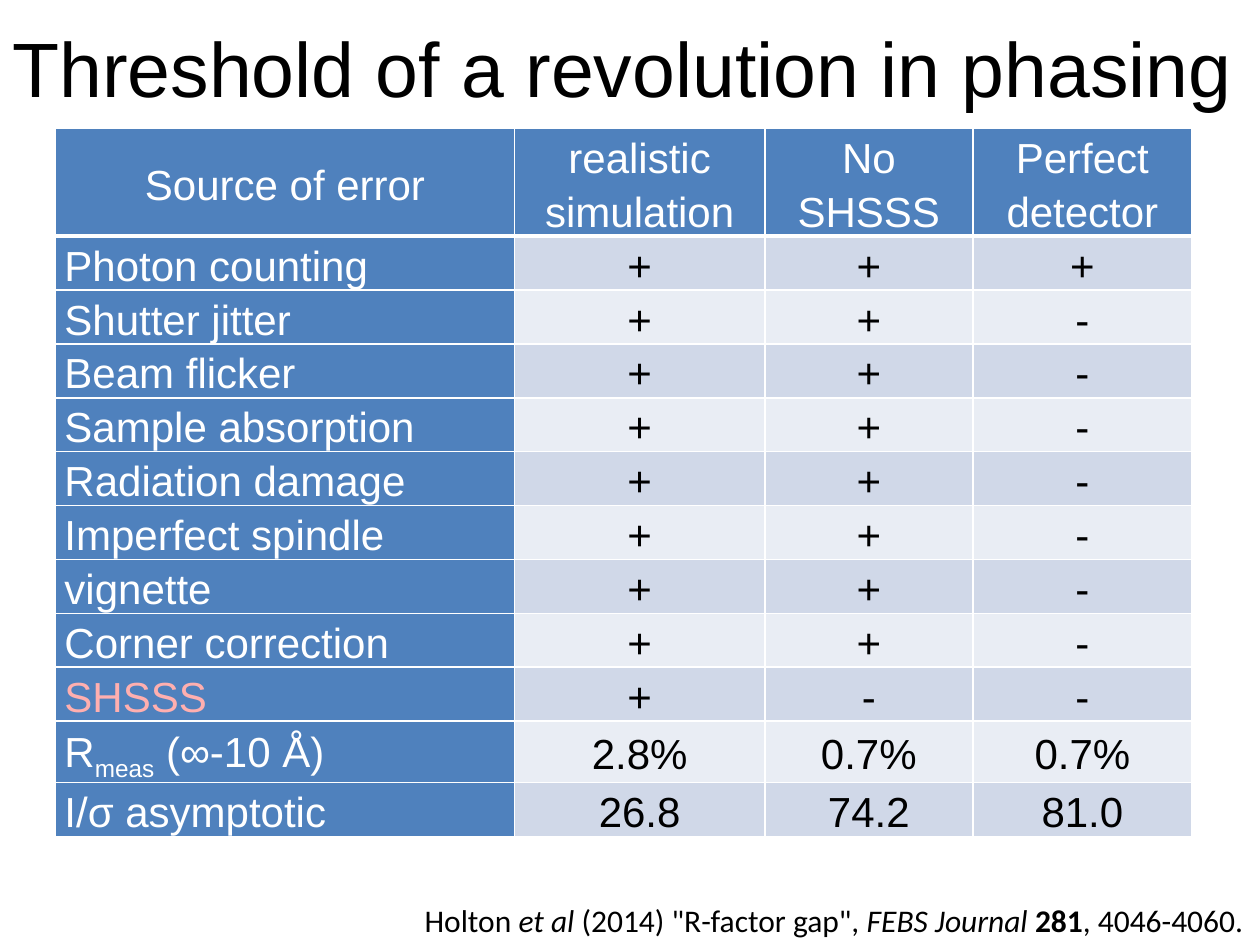
import dataclasses
import typing

import lxml.etree
import pptx
import pptx.dml.color
import pptx.enum.text
import pptx.oxml.ns
import pptx.util

Cm = pptx.util.Cm
Pt = pptx.util.Pt
Align = pptx.enum.text.PP_ALIGN
Anchor = pptx.enum.text.MSO_ANCHOR


@dataclasses.dataclass(frozen=True)
class Theme:
    sans: str = "Arial"
    citation_font: str = "Calibri"
    black: str = "000000"
    white: str = "FFFFFF"
    heading_fill: str = "4F81BD"
    bands: tuple[str, str] = ("D0D8E8", "E9EDF4")
    highlight: str = "FFAFAF"
    title_size: float = 44
    table_size: float = 24
    citation_size: float = 18
    rule: float = 1
    header_rule: float = 3


THEME = Theme()


@dataclasses.dataclass(frozen=True)
class Span:
    text: str
    italic: bool = False
    bold: bool = False
    subscript: bool = False


@dataclasses.dataclass(frozen=True)
class Style:
    font: str
    size: float
    color: str


@dataclasses.dataclass(frozen=True)
class ErrorRow:
    label: tuple[Span, ...]
    values: tuple[str, str, str]
    color: str = THEME.white


def plain_row(label: str, *values: str, color: str = THEME.white) -> ErrorRow:
    return ErrorRow((Span(label),), values, color)


HEADINGS = (("Source of error",), ("realistic", "simulation"), ("No SHSSS",), ("Perfect detector",))
DETECTOR_ERRORS = (
    "Shutter jitter", "Beam flicker", "Sample absorption", "Radiation damage",
    "Imperfect spindle", "vignette", "Corner correction",
)
ROWS = (
    plain_row("Photon counting", "+", "+", "+"),
    *(plain_row(name, "+", "+", "-") for name in DETECTOR_ERRORS),
    plain_row("SHSSS", "+", "-", "-", color=THEME.highlight),
    ErrorRow((Span("R"), Span("meas", subscript=True), Span(" (∞-10 Å)")), ("2.8%", "0.7%", "0.7%")),
    plain_row("I/σ asymptotic", "26.8", "74.2", "81.0"),
)
CITATION = (
    Span("Holton "), Span("et al", italic=True), Span(' (2014) "R-factor gap", '),
    Span("FEBS Journal ", italic=True), Span("281", bold=True), Span(", 4046-4060."),
)
COLUMN_WIDTHS = (9.25, 5.05, 4.19, 4.42)
HEADER_HEIGHT, ROW_HEIGHT = 2.01, 1.04


def rgb(color: str) -> pptx.dml.color.RGBColor:
    return pptx.dml.color.RGBColor.from_string(color)


def add_spans(para: typing.Any, spans: typing.Iterable[Span], style: Style) -> None:
    for span in spans:
        run = para.add_run()
        run.text = span.text
        run.font.name, run.font.size = style.font, Pt(style.size)
        run.font.bold, run.font.italic = span.bold, span.italic
        run.font.color.rgb = rgb(style.color)
        if span.subscript:
            run._r.get_or_add_rPr().set("baseline", "-25000")


def add_line(page: typing.Any, left: float, top: float, width: float, height: float,
             spans: typing.Iterable[Span], style: Style) -> None:
    """Add a text box that holds one paragraph."""
    box = page.shapes.add_textbox(Cm(left), Cm(top), Cm(width), Cm(height))
    box.text_frame.word_wrap = True
    box.text_frame.auto_size = pptx.enum.text.MSO_AUTO_SIZE.SHAPE_TO_FIT_TEXT
    add_spans(box.text_frame.paragraphs[0], spans, style)


def set_borders(cell: typing.Any, bottom: float) -> None:
    properties = cell._tc.get_or_add_tcPr()
    qn = pptx.oxml.ns.qn
    for side, width in (("L", THEME.rule), ("R", THEME.rule), ("T", THEME.rule), ("B", bottom)):
        line = lxml.etree.SubElement(properties, qn(f"a:ln{side}"), w=str(Pt(width)))
        fill = lxml.etree.SubElement(line, qn("a:solidFill"))
        lxml.etree.SubElement(fill, qn("a:srgbClr"), val=THEME.white)


def fill_cell(cell: typing.Any, lines: typing.Iterable[typing.Iterable[Span]], color: str, fill: str,
              align: Align = Align.CENTER, anchor: Anchor = Anchor.MIDDLE,
              bottom: float = THEME.rule) -> None:
    set_borders(cell, bottom)
    cell.fill.solid()
    cell.fill.fore_color.rgb = rgb(fill)
    cell.vertical_anchor = anchor
    cell.margin_left = cell.margin_right = Cm(0.18)
    cell.margin_top = cell.margin_bottom = Cm(0)
    for index, spans in enumerate(lines):
        frame = cell.text_frame
        para = frame.add_paragraph() if index else frame.paragraphs[0]
        para.alignment, para.line_spacing = align, 1.15
        add_spans(para, spans, Style(THEME.sans, THEME.table_size, color))


def add_error_table(page: typing.Any) -> None:
    height = HEADER_HEIGHT + ROW_HEIGHT * len(ROWS)
    table = page.shapes.add_table(
        len(ROWS) + 1, len(HEADINGS), Cm(1.12), Cm(2.59), Cm(sum(COLUMN_WIDTHS)), Cm(height)
    ).table
    for column, width in zip(table.columns, COLUMN_WIDTHS):
        column.width = Cm(width)
    for index, table_row in enumerate(table.rows):
        table_row.height = Cm(ROW_HEIGHT if index else HEADER_HEIGHT)

    for column, lines in enumerate(HEADINGS):
        fill_cell(table.cell(0, column), [(Span(line),) for line in lines],
                  THEME.white, THEME.heading_fill, bottom=THEME.header_rule)
    for index, row in enumerate(ROWS):
        fill_cell(table.cell(index + 1, 0), [row.label], row.color, THEME.heading_fill,
                  Align.LEFT, Anchor.TOP)
        for column, value in enumerate(row.values, start=1):
            fill_cell(table.cell(index + 1, column), [(Span(value),)], THEME.black,
                      THEME.bands[index % 2])


def main() -> None:
    deck = pptx.Presentation()
    deck.slide_width, deck.slide_height = Cm(25.4), Cm(19.05)
    page = deck.slides.add_slide(deck.slide_layouts[6])
    add_error_table(page)
    add_line(page, 0, 0.28, 25.4, 2.13, [Span("Threshold of a revolution in phasing")],
             Style(THEME.sans, THEME.title_size, THEME.black))
    add_line(page, 8.31, 18.03, 17.09, 1.02, CITATION,
             Style(THEME.citation_font, THEME.citation_size, THEME.black))
    deck.save("out.pptx")


if __name__ == "__main__":
    main()
